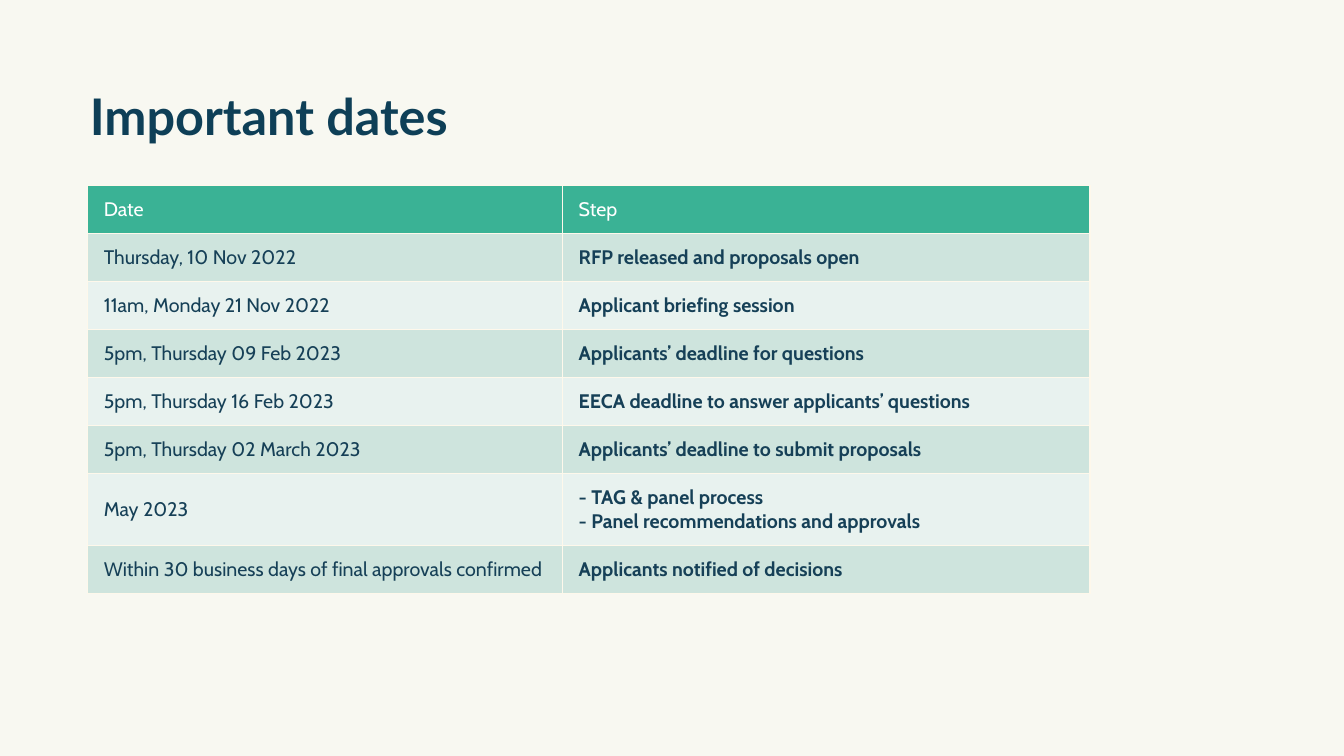
import pptx
import pptx.dml.color
import pptx.enum.text
import pptx.util
from lxml import etree

RGBColor = pptx.dml.color.RGBColor
ANCHOR = pptx.enum.text.MSO_ANCHOR

CREAM = RGBColor(0xF8, 0xF8, 0xF1)
NAVY = RGBColor(0x0E, 0x3F, 0x57)
INK = RGBColor(0x16, 0x40, 0x57)
WHITE = RGBColor(0xFF, 0xFF, 0xFF)
GREEN = RGBColor(0x3A, 0xB2, 0x95)
MINT = RGBColor(0xCE, 0xE4, 0xDD)
PALE = RGBColor(0xE8, 0xF2, 0xEF)
RULE = RGBColor(0xFE, 0xF8, 0xEB)

HEADINGS = ("Date", "Step")
STEPS = [
    ("Thursday, 10 Nov 2022", "RFP released and proposals open"),
    ("11am, Monday 21 Nov 2022", "Applicant briefing session"),
    ("5pm, Thursday 09 Feb 2023", "Applicants’ deadline for questions"),
    ("5pm, Thursday 16 Feb 2023", "EECA deadline to answer applicants’ questions"),
    ("5pm, Thursday 02 March 2023", "Applicants’ deadline to submit proposals"),
    ("May 2023", "- TAG & panel process\n- Panel recommendations and approvals"),
    ("Within 30 business days of final approvals confirmed",
     "Applicants notified of decisions"),
]


def px(length):
    """Turn px, at 100 to the inch, into EMU."""
    return pptx.util.Emu(length * 9144)


class Deck:
    title_font = "Lato"
    body_font = "Cabin"
    body_size = 14
    row_height = 47
    extra_line = 23

    def __init__(self, width, height):
        self.presentation = pptx.Presentation()
        self.presentation.slide_width = px(width)
        self.presentation.slide_height = px(height)
        self.slide = None

    def add_slide(self, background):
        layout = self.presentation.slide_layouts[5]
        self.slide = self.presentation.slides.add_slide(layout)
        fill = self.slide.background.fill
        fill.solid()
        fill.fore_color.rgb = background

    def style(self, paragraph, name, size, color, bold):
        font = paragraph.font
        font.name, font.size, font.bold = name, pptx.util.Pt(size), bold
        font.color.rgb = color

    def title(self, text, left, top, width, height):
        heading = self.slide.shapes.title
        heading.left, heading.top = px(left), px(top)
        heading.width, heading.height = px(width), px(height)
        frame = heading.text_frame
        frame.text = text
        frame.vertical_anchor = ANCHOR.MIDDLE
        frame.auto_size = pptx.enum.text.MSO_AUTO_SIZE.NONE
        paragraph = frame.paragraphs[0]
        paragraph.alignment = pptx.enum.text.PP_ALIGN.LEFT
        paragraph.line_spacing = 0.9
        self.style(paragraph, self.title_font, 36, NAVY, True)

    def borders(self, cell):
        properties = cell._tc.get_or_add_tcPr()
        for side in ("lnL", "lnR", "lnT", "lnB"):
            properties.append(pptx.oxml.parse_xml(
                f'<a:{side} xmlns:a="http://schemas.openxmlformats.org/drawingml/2006/main"'
                f' w="12700"><a:solidFill><a:srgbClr val="{RULE}"/></a:solidFill></a:{side}>'))

    def cell(self, cell, text, fill, color, bold):
        cell.text = text
        cell.vertical_anchor = ANCHOR.MIDDLE
        cell.margin_left, cell.margin_right = px(16), px(8)
        cell.margin_top = cell.margin_bottom = px(12)
        self.borders(cell)
        cell.fill.solid()
        cell.fill.fore_color.rgb = fill
        for paragraph in cell.text_frame.paragraphs:
            self.style(paragraph, self.body_font, self.body_size, color, bold)

    def table(self, headings, rows, left, top, column_widths):
        lines = [headings, *rows]
        heights = [self.row_height + self.extra_line * max(t.count("\n") for t in line)
                   for line in lines]
        table = self.slide.shapes.add_table(
            len(lines), len(headings), px(left), px(top),
            px(sum(column_widths)), px(sum(heights))).table
        for column, width in zip(table.columns, column_widths):
            column.width = px(width)
        for r, (line, height) in enumerate(zip(lines, heights)):
            table.rows[r].height = px(height)
            is_header = r == 0
            fill = GREEN if is_header else MINT if r % 2 else PALE
            for c, text in enumerate(line):
                self.cell(table.cell(r, c), text, fill,
                          WHITE if is_header else INK, not is_header and c == 1)


def main():
    deck = Deck(1333, 750)
    deck.add_slide(CREAM)
    # Heading
    deck.title("Important dates", 79, 74, 1205, 88)
    # Timetable of steps
    deck.table(HEADINGS, STEPS, 87, 184, (471, 523))
    deck.presentation.save("out.pptx")


if __name__ == "__main__":
    main()
